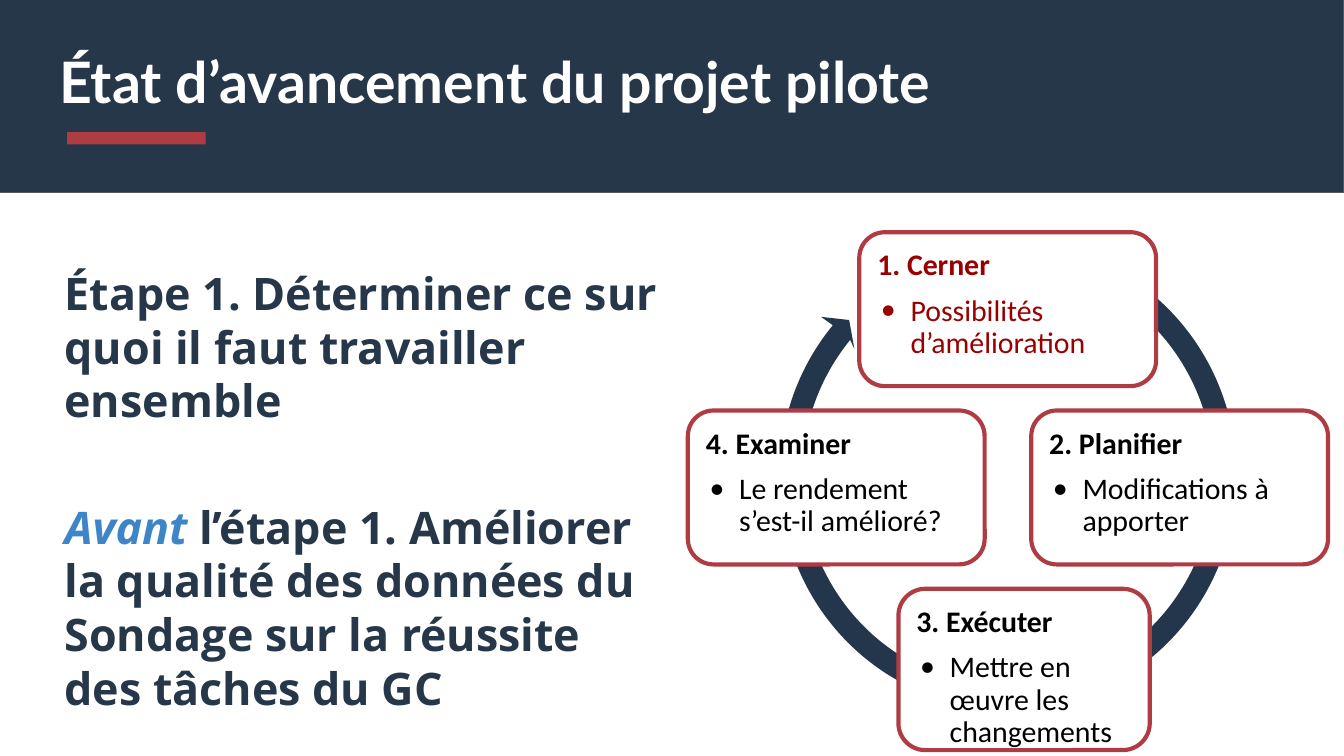
from copy import deepcopy
from math import cos, radians, sin, tan
from lxml.etree import SubElement
from pptx import Presentation
from pptx.dml.color import RGBColor
from pptx.enum.shapes import MSO_SHAPE
from pptx.enum.text import MSO_ANCHOR
from pptx.oxml.ns import qn
from pptx.util import Cm, Pt

NAVY = RGBColor(0x26, 0x37, 0x4A)
RING = RGBColor(0x23, 0x36, 0x4C)
RED = RGBColor(0xAF, 0x3C, 0x43)
DARK_RED = RGBColor(0x99, 0x00, 0x00)
BLUE = RGBColor(0x3D, 0x85, 0xC6)
GRAY = RGBColor(0x59, 0x59, 0x59)
WHITE = RGBColor(0xFF, 0xFF, 0xFF)
BLACK = RGBColor(0x00, 0x00, 0x00)

deck = Presentation()
deck.slide_width, deck.slide_height = Cm(25.4), Cm(14.29)
page = deck.slides.add_slide(deck.slide_layouts[6])


def add_panel(kind, left, top, width, height, fill, line=None, weight=0.75):
    panel = page.shapes.add_shape(kind, Cm(left), Cm(top), Cm(width), Cm(height))
    panel.shadow.inherit = False
    panel.fill.solid()
    panel.fill.fore_color.rgb = fill
    if line is None:
        panel.line.fill.background()
    else:
        panel.line.color.rgb = line
        panel.line.width = Pt(weight)


def add_text(left, top, width, height, inset, font, size, paragraphs):
    """Each paragraph is a list of (text, colour, bold, italic) spans."""
    box = page.shapes.add_textbox(Cm(left), Cm(top), Cm(width), Cm(height))
    frame = box.text_frame
    frame.word_wrap = True
    frame.margin_left = frame.margin_right = Cm(inset)
    frame.margin_top = frame.margin_bottom = Cm(inset)
    for index, spans in enumerate(paragraphs):
        para = frame.add_paragraph() if index else frame.paragraphs[0]
        for text, colour, bold, italic in spans:
            span = para.add_run()
            span.text = text
            span.font.name = font
            span.font.size = Pt(size)
            span.font.color.rgb = colour
            span.font.bold = bold
            span.font.italic = italic
    return box


# Header band, title and accent bar
add_panel(MSO_SHAPE.RECTANGLE, -0.13, -0.03, 25.53, 3.67, NAVY, GRAY)
add_text(0.87, 0.63, 19.48, 2.67, 0.25, "Lato", 30.6,
         [[("État d’avancement du projet pilote", WHITE, True, False)]])
add_panel(MSO_SHAPE.RECTANGLE, 1.27, 2.5, 2.62, 0.23, RED)

# Steps on the left, the first one closed by a line break
steps = add_text(0.97, 4.7, 11.73, 9.12, 0.25, "Open Sans", 24, [
    [("Étape 1. Déterminer ce sur quoi il faut travailler ensemble", NAVY, True, False)],
    [("Avant ", BLUE, True, True),
     ("l’étape 1. Améliorer la qualité des données du Sondage sur la réussite "
      "des tâches du GC", NAVY, True, False)],
])
steps.line.color.rgb = WHITE
steps.line.width = Pt(0.75)
steps.text_frame.vertical_anchor = MSO_ANCHOR.MIDDLE
first_step, second_step = steps.text_frame.paragraphs
second_step.space_before = Pt(10)
first_step.add_line_break()
step_format = first_step.runs[0]._r.rPr
first_step._p.find(qn("a:br")).append(deepcopy(step_format))
end_format = deepcopy(step_format)
end_format.tag = qn("a:endParaRPr")
first_step._p.append(end_format)

# Ring arrow: outer arc clockwise, arrowhead, inner arc back, four curves an arc
CENTER_X, CENTER_Y = 19.05, 8.99
START, SWEEP, CURVES = -63, 283, 4
STEP = radians(SWEEP / CURVES)
HANDLE = 4 / 3 * tan(STEP / 4)
arcs = []
for radius_x, radius_y in ((4.32, 4.42), (3.89, 3.99)):
    arc = []
    for number in range(CURVES + 1):
        angle = radians(START) + number * STEP
        for shift in (-HANDLE, 0, HANDLE):
            arc.append((CENTER_X + radius_x * (cos(angle) - shift * sin(angle)),
                        CENTER_Y + radius_y * (sin(angle) + shift * cos(angle))))
    arcs.append(arc[1:-1])
outer, inner = arcs
arrowhead = [(15.52, 5.99), (16.05, 6.05), (16.15, 6.6)]
outline = [(Cm(x), Cm(y)) for x, y in outer + arrowhead + inner[::-1]]
builder = page.shapes.build_freeform(*outline[0])
builder.add_line_segments(outline[1:], close=True)
ring = builder.convert_to_shape()
ring.shadow.inherit = False
ring.fill.solid()
ring.fill.fore_color.rgb = RING
ring.line.fill.background()

# Join each three arc points into one curve
lines = list(ring._element.iter(qn("a:lnTo")))
inner_start = len(outer) + len(arrowhead)
for arc_start in (0, inner_start):
    for first in range(arc_start, arc_start + 3 * CURVES, 3):
        curve = lines[first]
        curve.tag = qn("a:cubicBezTo")
        for line in lines[first + 1:first + 3]:
            curve.append(line[0])
            line.getparent().remove(line)

# Cycle cards: left, top, width, height, text width, heading, detail, colour
cards = [
    (16.24, 4.39, 5.61, 2.91, 5.33, "1. Cerner", "Possibilités d’amélioration", DARK_RED),
    (19.49, 7.76, 5.61, 2.91, 5.33, "2. Planifier", "Modifications à apporter", BLACK),
    (16.98, 11.13, 4.75, 3.05, 4.27, "3. Exécuter", "Mettre en œuvre les changements", BLACK),
    (13, 7.76, 5.61, 2.91, 5.33, "4. Examiner", "Le rendement s’est-il amélioré?", BLACK),
]
for left, top, width, height, text_width, heading, detail, colour in cards:
    add_panel(MSO_SHAPE.ROUNDED_RECTANGLE, left, top, width, height, WHITE, RED, 2.25)
    card = add_text(left + 0.14, top + 0.14, text_width, 2.62, 0.2, "Calibri", 16,
                    [[(heading, colour, True, False)], [(detail, colour, False, False)]])
    for para in card.text_frame.paragraphs:
        para.line_spacing = 0.9
    bullet = card.text_frame.paragraphs[1]
    bullet.level = 1
    bullet.space_before = Pt(7)
    properties = bullet._p.get_or_add_pPr()
    properties.set("marL", str(Cm(0.63)))
    properties.set("indent", str(Cm(-0.56)))
    bullet_colour = SubElement(properties, qn("a:buClr"))
    SubElement(bullet_colour, qn("a:srgbClr")).set("val", str(colour))
    SubElement(properties, qn("a:buFont")).set("typeface", "Calibri")
    SubElement(properties, qn("a:buChar")).set("char", "•")

deck.save("out.pptx")
